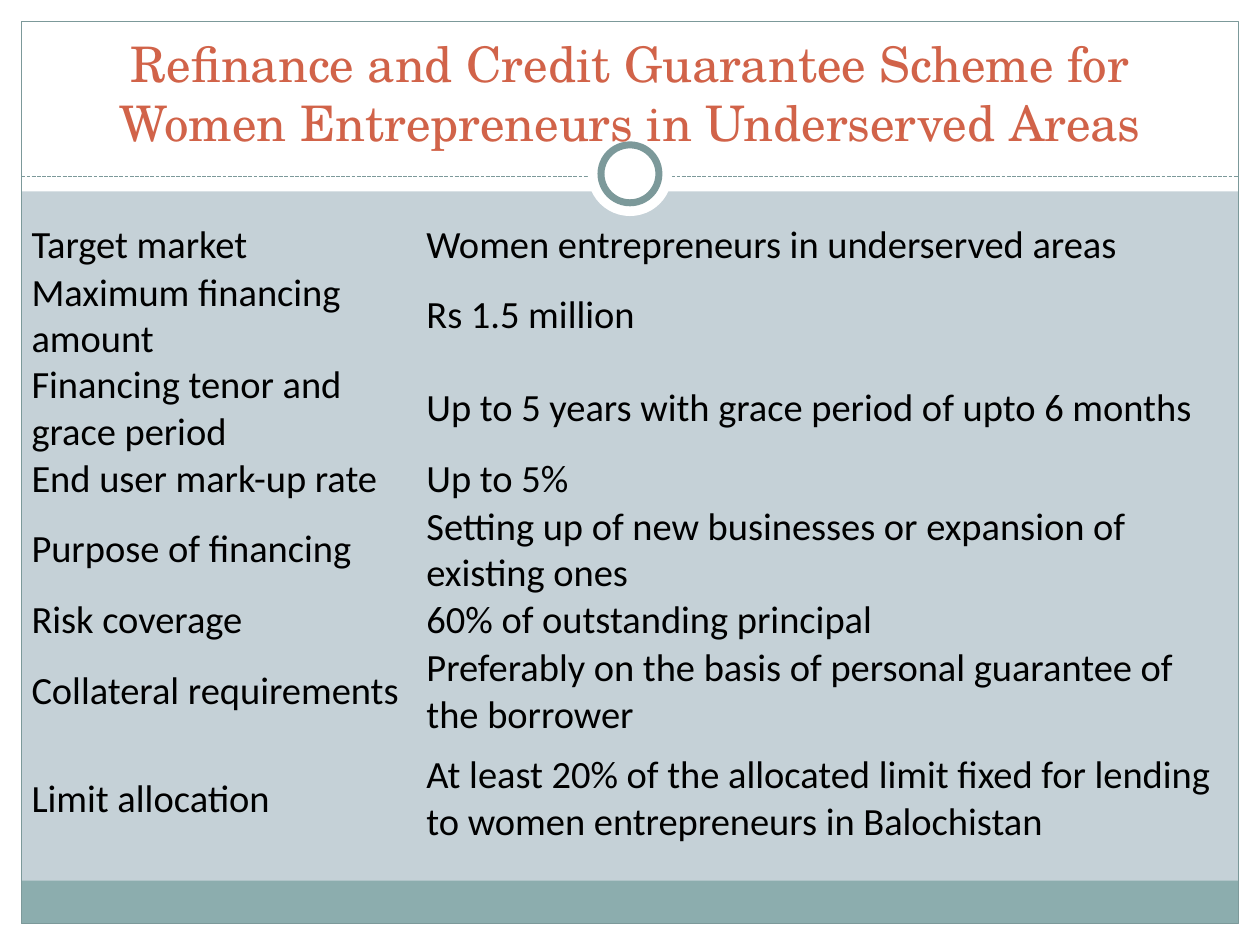
from lxml.etree import SubElement
from pptx import Presentation
from pptx.dml.color import RGBColor
from pptx.enum.dml import MSO_LINE
from pptx.enum.shapes import MSO_CONNECTOR, MSO_SHAPE
from pptx.enum.text import MSO_ANCHOR, PP_ALIGN
from pptx.oxml.ns import qn
from pptx.util import Inches, Pt

WIDTH, HEIGHT = 10, 7.5
MARGIN = 0.17
HEADER_BOTTOM = 1.52
RULE_Y = 1.4
MEDALLION_Y = 1.38
COLORS = {
    "background": "C5D1D7",
    "paper": "FFFFFF",
    "footer": "8CADAE",
    "rule": "7C999A",
    "title": "D16349",
    "text": "000000",
}
NO_STYLE = "{2D5ABB26-0587-4C30-8999-92F81FD0307C}"
SINGLE, DOUBLE, LAST = 0.39, 0.66, 0.98
COLUMN_SHARES = (0.33, 0.67)
TERMS = [
    ("Target market", "Women entrepreneurs in underserved areas", SINGLE),
    ("Maximum financing amount", "Rs 1.5 million", DOUBLE),
    ("Financing tenor and grace period",
     "Up to 5 years with grace period of upto 6 months", DOUBLE),
    ("End user mark-up rate", "Up to 5%", SINGLE),
    ("Purpose of financing",
     "Setting up of new businesses or expansion of existing ones", DOUBLE),
    ("Risk coverage", "60% of outstanding principal", SINGLE),
    ("Collateral requirements",
     "Preferably on the basis of personal guarantee of the borrower", DOUBLE),
    ("Limit allocation",
     "At least 20% of the allocated limit fixed for lending to women "
     "entrepreneurs in Balochistan", LAST),
]


def color(name):
    return RGBColor.from_string(COLORS[name])


def format_text(paragraph, font_name, size, color_name):
    for run in paragraph.runs:
        run.font.name = font_name
        run.font.size = Pt(size)
        run.font.color.rgb = color(color_name)


def add_panel(slide, box, fill=None, line_width=0, kind=MSO_SHAPE.RECTANGLE):
    panel = slide.shapes.add_shape(kind, *map(Inches, box))
    panel.shadow.inherit = False
    if fill:
        panel.fill.solid()
        panel.fill.fore_color.rgb = color(fill)
    else:
        panel.fill.background()
    if line_width:
        panel.line.color.rgb = color("rule")
        panel.line.width = Pt(line_width)
    else:
        panel.line.fill.background()


def add_disc(slide, diameter, line_width=0):
    box = (WIDTH / 2 - diameter / 2, MEDALLION_Y - diameter / 2, diameter, diameter)
    add_panel(slide, box, "paper", line_width, MSO_SHAPE.OVAL)


def add_dashed_rule(slide):
    rule = slide.shapes.add_connector(
        MSO_CONNECTOR.STRAIGHT, Inches(MARGIN), Inches(RULE_Y),
        Inches(WIDTH - MARGIN), Inches(RULE_Y))
    rule.line.color.rgb = color("rule")
    rule.line.width = Pt(0.75)
    rule.line.dash_style = MSO_LINE.SQUARE_DOT
    # The preset "sysDash" is what SQUARE_DOT's finer sibling is called in XML
    rule.line._ln.find(qn("a:prstDash")).set("val", "sysDash")
    SubElement(rule._element.spPr, qn("a:effectLst"))


def add_title(slide, text):
    title = slide.shapes.add_textbox(
        Inches(0.33), Inches(0.42), Inches(WIDTH - 2 * 0.33), Inches(0.83))
    frame = title.text_frame
    frame.word_wrap = True
    frame.vertical_anchor = MSO_ANCHOR.BOTTOM
    frame.text = text
    frame.paragraphs[0].alignment = PP_ALIGN.CENTER
    format_text(frame.paragraphs[0], "TeX Gyre Schola", 28, "title")


def fill_cell(cell, text):
    cell.text = text
    cell.vertical_anchor = MSO_ANCHOR.MIDDLE
    cell.margin_left = cell.margin_right = 0
    cell.margin_top = cell.margin_bottom = 0
    format_text(cell.text_frame.paragraphs[0], "Calibri", 22, "text")
    # Borders come before the fill in the cell's properties
    properties = cell._tc.get_or_add_tcPr()
    for side in ("lnL", "lnR", "lnT", "lnB"):
        SubElement(SubElement(properties, qn(f"a:{side}")), qn("a:noFill"))
    cell.fill.background()


def add_terms_table(slide, left, top, width):
    height = sum(row_height for *_, row_height in TERMS)
    table = slide.shapes.add_table(
        len(TERMS), len(COLUMN_SHARES), Inches(left), Inches(top),
        Inches(width), Inches(height)).table
    table.first_row = table.horz_banding = False
    table._tbl.tblPr.find(qn("a:tableStyleId")).text = NO_STYLE
    for column, share in zip(table.columns, COLUMN_SHARES):
        column.width = Inches(width * share)
    for row, (label, value, row_height) in zip(table.rows, TERMS):
        row.height = Inches(row_height)
        for cell, text in zip(row.cells, (label, value)):
            fill_cell(cell, text)


def main():
    presentation = Presentation()
    presentation.slide_width = Inches(WIDTH)
    presentation.slide_height = Inches(HEIGHT)
    slide = presentation.slides.add_slide(presentation.slide_layouts[6])
    slide.background.fill.solid()
    slide.background.fill.fore_color.rgb = color("background")

    # White page edges and header
    for box in (
        (0, HEIGHT - MARGIN, WIDTH, MARGIN),
        (0, 0, WIDTH, HEADER_BOTTOM),
        (0, 0, MARGIN, HEIGHT),
        (WIDTH - MARGIN, 0, MARGIN, HEIGHT),
    ):
        add_panel(slide, box, "paper")

    # Footer band, frame and dashed rule
    inner_width = WIDTH - 2 * MARGIN
    add_panel(slide, (MARGIN, 6.99, inner_width, 0.34), "footer")
    add_panel(slide, (MARGIN, MARGIN, inner_width, HEIGHT - 2 * MARGIN), line_width=0.75)
    add_dashed_rule(slide)

    # Medallion on the rule
    add_disc(slide, 0.67)
    add_disc(slide, 0.46, line_width=4)

    # Title and scheme terms
    add_title(slide, "Refinance and Credit Guarantee Scheme for "
                     "Women Entrepreneurs in Underserved Areas")
    add_terms_table(slide, 0.25, 1.75, 9.5)

    presentation.save("out.pptx")


if __name__ == "__main__":
    main()
